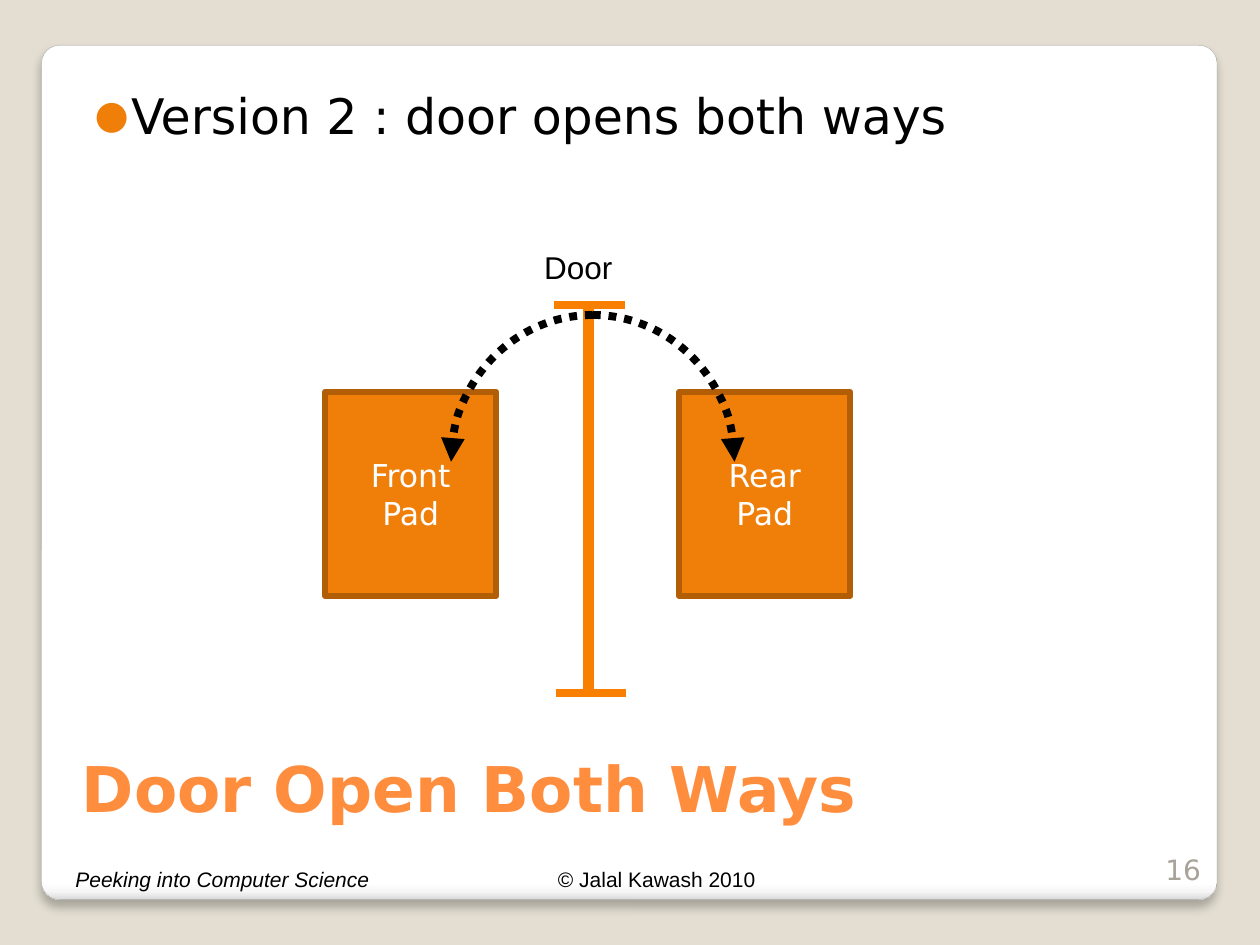
from lxml.etree import SubElement
from pptx import Presentation
from pptx.dml.color import RGBColor
from pptx.enum.dml import MSO_LINE
from pptx.enum.shapes import MSO_CONNECTOR, MSO_SHAPE
from pptx.enum.text import MSO_ANCHOR, MSO_AUTO_SIZE, PP_ALIGN
from pptx.oxml import parse_xml
from pptx.oxml.ns import nsdecls, qn
from pptx.util import Inches, Pt

COLORS = {
    "back": "E3DED1", "white": "FFFFFF", "edge": "A4A3A3", "black": "000000",
    "title": "FF8D3E", "pad": "F07F09", "rim": "B25E07", "door": "F97F00",
    "page": "A7A399",
}
SANS, ARIAL = "DejaVu Sans", "Arial"
TITLE = "Door Open Both Ways"
POINT = "Version 2 : door opens both ways"
PADS = [(2.58, ["Front", "Pad"]), (5.39, ["Rear", "Pad"])]
DOOR = [
    ((4.67, 2.42), (4.67, 5.5), 6),
    ((4.4, 2.42), (4.96, 2.42), 4.5),
    ((4.41, 5.5), (4.97, 5.5), 4.5),
]
LABELS = [
    ("Door", (4.22, 1.92, 0.78, 0.37), 18, False),
    ("© Jalal Kawash 2010", (4.33, 6.83, 1.78, 0.3), 12, False),
    ("Peeking into Computer Science", (0.5, 6.83, 2.55, 0.3), 12, True),
]
PAGE = "16"
SWING = (3.58, 2.5, 2.25, 2.33)
STOPS = [(0, "FFFFFF"), (98, "FFFFFF"), (99, "F7F7F7"), (100, "DADADA")]


def rgb(name):
    return RGBColor.from_string(COLORS[name])


def box(at):
    return [Inches(n) for n in at]


def write(frame, lines, size, font, color, bold=False, slant=False,
          align=PP_ALIGN.LEFT, anchor=MSO_ANCHOR.TOP, wrap=True):
    frame.word_wrap = wrap
    frame.auto_size = MSO_AUTO_SIZE.NONE if wrap else MSO_AUTO_SIZE.SHAPE_TO_FIT_TEXT
    frame.vertical_anchor = anchor
    for i, line in enumerate(lines):
        para = frame.add_paragraph() if i else frame.paragraphs[0]
        para.alignment = align
        para.space_before = Pt(0)
        run = para.add_run()
        run.text = line
        run.font.size = Pt(size)
        run.font.name = font
        run.font.bold = bold
        run.font.italic = slant
        run.font.color.rgb = rgb(color)


def shape(kind, at, line, width, fill=None):
    item = slide.shapes.add_shape(kind, *box(at))
    item.shadow.inherit = False
    if fill:
        item.fill.solid()
        item.fill.fore_color.rgb = rgb(fill)
    else:
        item.fill.background()
    item.line.color.rgb = rgb(line)
    item.line.width = Pt(width)
    return item


def place(item, at):
    item.left, item.top, item.width, item.height = box(at)


deck = Presentation()
deck.slide_width, deck.slide_height = Inches(10), Inches(7.5)
slide = deck.slides.add_slide(deck.slide_layouts[1])
slide.background.fill.solid()
slide.background.fill.fore_color.rgb = rgb("back")
title, body = slide.placeholders

card = shape(MSO_SHAPE.ROUNDED_RECTANGLE, (0.33, 0.36, 9.33, 6.78), "edge", 0.16, "white")
card.adjustments[0] = 0.021
props = card.element.spPr
stops = "".join(
    f'<a:gs pos="{pos * 1000}"><a:srgbClr val="{tint}"/></a:gs>' for pos, tint in STOPS
)
props.replace(props.find(qn("a:solidFill")), parse_xml(
    f'<a:gradFill {nsdecls("a")}><a:gsLst>{stops}</a:gsLst>'
    '<a:lin ang="5400000" scaled="0"/></a:gradFill>'
))
props.find(qn("a:effectLst")).append(parse_xml(
    f'<a:outerShdw {nsdecls("a")} blurRad="{Pt(5)}" dist="{Pt(4)}" dir="5400000" '
    'algn="t" rotWithShape="0"><a:srgbClr val="000000"><a:alpha val="25000"/>'
    '</a:srgbClr></a:outerShdw>'
))
title.element.addprevious(card.element)

place(title, (0.55, 5.45, 8.95, 1.15))
write(title.text_frame, [TITLE], 36, SANS, "title", bold=True, anchor=MSO_ANCHOR.BOTTOM)

place(body, (0.55, 0.58, 8.95, 4.58))
frame = body.text_frame
frame.margin_left, frame.margin_top = Inches(0.2), Inches(0.1)
write(frame, [POINT], 28, SANS, "black")
mark = frame.paragraphs[0]._p.get_or_add_pPr()
mark.set("marL", str(Inches(0.29)))
mark.set("indent", str(-Inches(0.29)))
SubElement(SubElement(mark, qn("a:buClr")), qn("a:srgbClr"), val=COLORS["pad"])
SubElement(mark, qn("a:buSzPct"), val="80000")
SubElement(mark, qn("a:buFont"), typeface=SANS)
SubElement(mark, qn("a:buChar"), char="●")

for left, words in PADS:
    pad = shape(MSO_SHAPE.RECTANGLE, (left, 3.11, 1.36, 1.62), "rim", 3.35, "pad")
    write(pad.text_frame, words, 18, SANS, "white",
          align=PP_ALIGN.CENTER, anchor=MSO_ANCHOR.MIDDLE)

for start, end, width in DOOR:
    bar = slide.shapes.add_connector(MSO_CONNECTOR.STRAIGHT, *box(start + end))
    bar.line.color.rgb = rgb("door")
    bar.line.width = Pt(width)
    SubElement(bar.element.spPr, qn("a:effectLst"))

for text, at, size, slant in LABELS:
    label = slide.shapes.add_textbox(*box(at))
    write(label.text_frame, [text], size, ARIAL, "black", slant=slant, wrap=False)

for flip in (False, True):
    arc = shape(MSO_SHAPE.ARC, SWING, "black", 4.5)
    arc.line.dash_style = MSO_LINE.ROUND_DOT
    SubElement(arc.line._get_or_add_ln(), qn("a:tailEnd"), type="triangle")
    if flip:
        arc.element.spPr.find(qn("a:xfrm")).set("flipH", "1")

page = slide.shapes.add_textbox(*box((9.13, 6.68, 0.5, 0.4)))
write(page.text_frame, [PAGE], 16, SANS, "page",
      align=PP_ALIGN.RIGHT, anchor=MSO_ANCHOR.BOTTOM)

deck.save("out.pptx")
